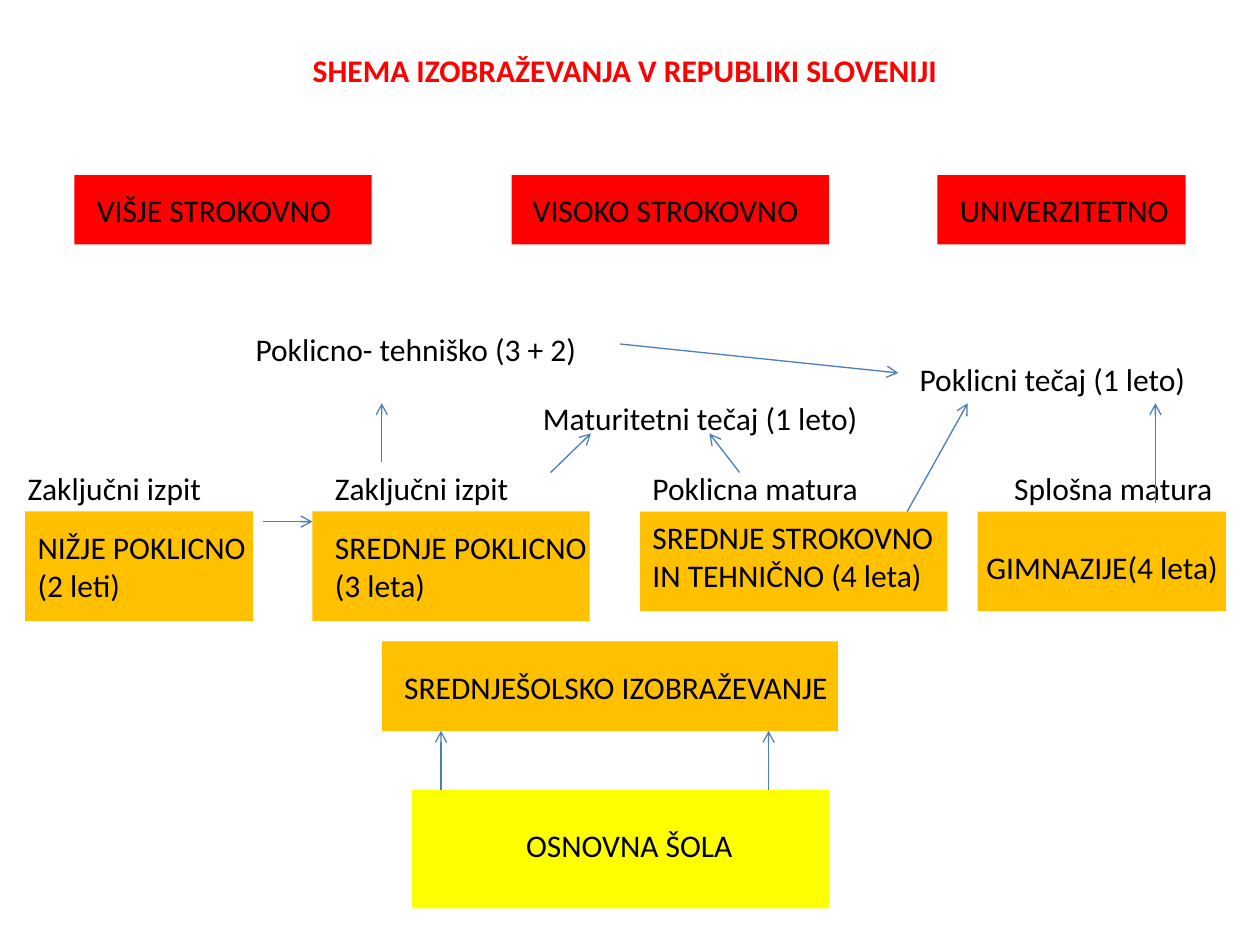
from typing import NamedTuple

import pptx
import pptx.dml.color
import pptx.enum.shapes
import pptx.enum.text
import pptx.oxml
import pptx.oxml.ns
import pptx.util
from pptx.util import Inches

COLORS = {
    "higher": "FF0000",
    "secondary": "FFC000",
    "primary": "FFFF00",
    "title": "FF0000",
    "text": "000000",
    "arrow": "4B7EBC",
}
HIGHER_TOP, SECONDARY_TOP, EXAM_TOP = 1.39, 4.06, 3.67
LINE_HEIGHT, TWO_LINES = 0.4, 0.71


class Box(NamedTuple):
    left: float
    top: float
    width: float
    height: float
    color: str


class Label(NamedTuple):
    text: str
    left: float
    top: float
    width: float
    height: float = LINE_HEIGHT
    color: str = "text"
    centered: bool = False
    bold: bool = False


class Arrow(NamedTuple):
    from_x: float
    from_y: float
    to_x: float
    to_y: float


BOXES = [
    # Higher education
    Box(0.59, HIGHER_TOP, 2.36, 0.55, "higher"),
    Box(4.06, HIGHER_TOP, 2.52, 0.55, "higher"),
    Box(7.44, HIGHER_TOP, 1.97, 0.55, "higher"),
    # Secondary programmes
    Box(0.2, SECONDARY_TOP, 1.81, 0.87, "secondary"),
    Box(2.48, SECONDARY_TOP, 2.2, 0.87, "secondary"),
    Box(5.08, SECONDARY_TOP, 2.44, 0.79, "secondary"),
    Box(7.76, SECONDARY_TOP, 1.97, 0.79, "secondary"),
    Box(3.03, 5.09, 3.62, 0.71, "secondary"),
    # Primary school
    Box(3.27, 6.27, 3.31, 0.94, "primary"),
]

LABELS = [
    Label("SHEMA IZOBRAŽEVANJA V REPUBLIKI SLOVENIJI", 1.77, 0.36, 6.38,
          color="title", centered=True, bold=True),
    # Higher education
    Label("VIŠJE STROKOVNO", 0.67, HIGHER_TOP + 0.08, 2.83),
    Label("VISOKO STROKOVNO", 4.13, HIGHER_TOP + 0.08, 2.36),
    Label("UNIVERZITETNO", 7.52, HIGHER_TOP + 0.08, 2.68),
    # Bridging courses
    Label("Poklicno- tehniško (3 + 2)", 1.93, 2.57, 3.46),
    Label("Maturitetni tečaj (1 leto)", 4.21, 3.12, 2.99),
    Label("Poklicni tečaj (1 leto)", 7.2, 2.81, 2.52),
    # Final exams
    Label("Zaključni izpit", 0.12, EXAM_TOP, 1.81),
    Label("Zaključni izpit", 2.56, EXAM_TOP, 2.05),
    Label("Poklicna matura", 5.08, EXAM_TOP, 2.36),
    Label("Splošna matura", 7.95, EXAM_TOP, 2.05),
    # Secondary programmes
    Label("NIŽJE POKLICNO\n(2 leti)", 0.2, 4.14, 2.6, TWO_LINES),
    Label("SREDNJE POKLICNO\n(3 leta)", 2.56, 4.14, 2.76, TWO_LINES),
    Label("SREDNJE STROKOVNO IN TEHNIČNO (4 leta)",
          5.08, SECONDARY_TOP, 2.68, TWO_LINES),
    Label("GIMNAZIJE(4 leta)", 7.73, 4.3, 2.05),
    Label("SREDNJEŠOLSKO IZOBRAŽEVANJE", 3.11, 5.25, 7.24),
    # Primary school
    Label("OSNOVNA ŠOLA", 1.06, 6.51, 7.87, centered=True),
]

ARROWS = [
    # Primary to secondary
    Arrow(3.5, 6.27, 3.5, 5.8),
    Arrow(6.1, 6.27, 6.1, 5.8),
    # Between vocational programmes
    Arrow(2.09, 4.14, 2.48, 4.14),
    # Exams to bridging courses
    Arrow(3.03, 3.67, 3.03, 3.2),
    Arrow(4.37, 3.75, 4.69, 3.44),
    Arrow(5.87, 3.75, 5.63, 3.44),
    Arrow(7.2, 4.06, 7.68, 3.2),
    Arrow(9.17, 3.99, 9.17, 3.2),
    Arrow(4.92, 2.73, 7.13, 2.96),
]


def rgb(name: str) -> pptx.dml.color.RGBColor:
    return pptx.dml.color.RGBColor.from_string(COLORS[name])


def draw_box(slide: pptx.slide.Slide, box: Box) -> None:
    shape = slide.shapes.add_shape(
        pptx.enum.shapes.MSO_SHAPE.RECTANGLE,
        Inches(box.left), Inches(box.top), Inches(box.width), Inches(box.height))
    shape.shadow.inherit = False
    shape.fill.solid()
    shape.fill.fore_color.rgb = rgb(box.color)
    shape.line.fill.background()


def draw_label(slide: pptx.slide.Slide, label: Label) -> None:
    shape = slide.shapes.add_textbox(
        Inches(label.left), Inches(label.top),
        Inches(label.width), Inches(label.height))
    frame = shape.text_frame
    frame.word_wrap = True
    frame.auto_size = pptx.enum.text.MSO_AUTO_SIZE.SHAPE_TO_FIT_TEXT
    frame.text = label.text
    for paragraph in frame.paragraphs:
        if label.centered:
            paragraph.alignment = pptx.enum.text.PP_ALIGN.CENTER
        paragraph.font.name = "Calibri"
        paragraph.font.size = pptx.util.Pt(18)
        paragraph.font.bold = label.bold
        paragraph.font.color.rgb = rgb(label.color)


def draw_arrow(slide: pptx.slide.Slide, arrow: Arrow) -> None:
    connector = slide.shapes.add_connector(
        pptx.enum.shapes.MSO_CONNECTOR.STRAIGHT,
        Inches(arrow.from_x), Inches(arrow.from_y),
        Inches(arrow.to_x), Inches(arrow.to_y))
    connector.line.color.rgb = rgb("arrow")
    connector.line.width = pptx.util.Pt(0.75)
    # Arrowhead at the end, and no shadow
    properties = connector.element.spPr
    head = pptx.oxml.parse_xml(
        f'<a:tailEnd {pptx.oxml.ns.nsdecls("a")} type="arrow"/>')
    properties.find(pptx.oxml.ns.qn("a:ln")).append(head)
    properties.append(pptx.oxml.parse_xml(
        f'<a:effectLst {pptx.oxml.ns.nsdecls("a")}/>'))


def main() -> None:
    presentation = pptx.Presentation()
    presentation.slide_width = Inches(10)
    presentation.slide_height = Inches(7.5)
    slide = presentation.slides.add_slide(presentation.slide_layouts[6])
    for box in BOXES:
        draw_box(slide, box)
    for label in LABELS:
        draw_label(slide, label)
    for arrow in ARROWS:
        draw_arrow(slide, arrow)
    presentation.save("out.pptx")


if __name__ == "__main__":
    main()
